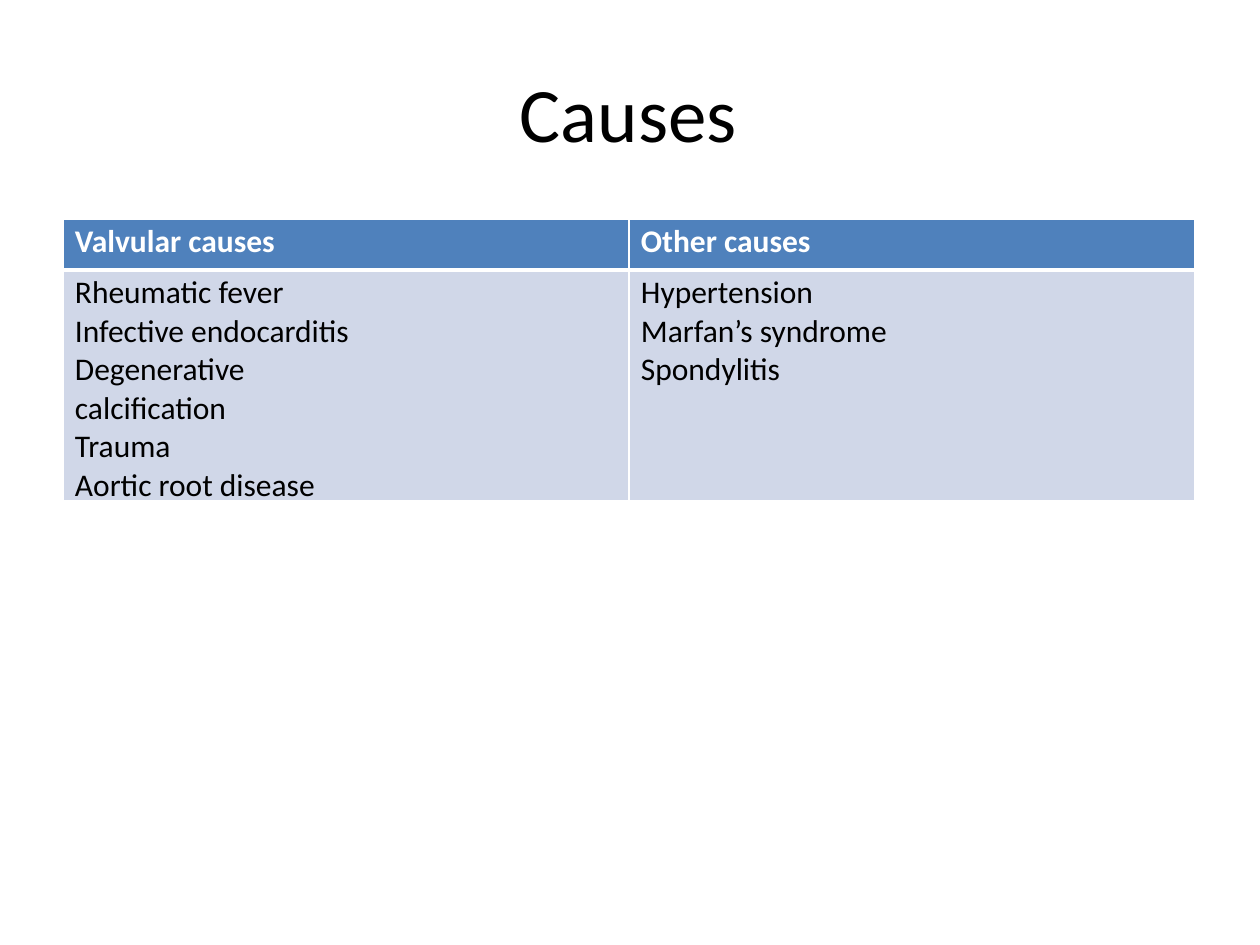
import pptx
import pptx.dml.color
import pptx.oxml
import pptx.oxml.ns
import pptx.util

PX = 914400 // 126
FONT = "Calibri"
COLORS = {"text": "000000", "header": "4F81BC", "body": "D0D7E8", "line": "FFFFFF"}


def style(paragraph, size, color, bold=False):
    paragraph.font.name = FONT
    paragraph.font.size = pptx.util.Pt(size)
    paragraph.font.bold = bold
    paragraph.font.color.rgb = pptx.dml.color.RGBColor.from_string(COLORS[color])


def set_borders(cell, widths):
    """Draw the left, right, top and bottom borders, with widths in points."""
    properties = cell._tc.get_or_add_tcPr()
    for position, (side, width) in enumerate(zip("LRTB", widths)):
        border = pptx.oxml.parse_xml(
            f'<a:ln{side} {pptx.oxml.ns.nsdecls("a")} w="{pptx.util.Pt(width)}">'
            f'<a:solidFill><a:srgbClr val="{COLORS["line"]}"/></a:solidFill></a:ln{side}>'
        )
        properties.insert(position, border)


presentation = pptx.Presentation()
presentation.slide_width = 1260 * PX
presentation.slide_height = 945 * PX
slide = presentation.slides.add_slide(presentation.slide_layouts[6])

title = slide.shapes.add_textbox(520 * PX, 66 * PX, 352 * PX, 94 * PX).text_frame
title.word_wrap = True
title.margin_left = title.margin_right = title.margin_top = title.margin_bottom = 0
title.text = "Causes"
style(title.paragraphs[0], 44, "text")

# A vertical tab is a line break inside one cause.
causes = {
    "Valvular causes": [
        "Rheumatic fever",
        "Infective endocarditis",
        "Degenerative\vcalcification",
        "Trauma",
        "Aortic root disease",
    ],
    "Other causes": ["Hypertension", "Marfan’s syndrome", "Spondylitis"],
}
table = slide.shapes.add_table(
    2, len(causes), 63 * PX, 219 * PX, 1132 * PX, 282 * PX
).table
table.rows[0].height = 51 * PX
table.rows[1].height = 231 * PX

for column, (heading, items) in enumerate(causes.items()):
    table.columns[column].width = 566 * PX
    rows = [
        ([heading], "header", "line", True, (1, 1, 1, 3)),
        (items, "body", "text", False, (1, 1, 3, 1)),
    ]
    for row, (lines, fill, color, bold, border_widths) in enumerate(rows):
        cell = table.cell(row, column)
        cell.margin_left = 12 * PX
        cell.margin_top = 4 * PX
        cell.margin_right = cell.margin_bottom = 0
        cell.fill.solid()
        cell.fill.fore_color.rgb = pptx.dml.color.RGBColor.from_string(COLORS[fill])
        set_borders(cell, border_widths)
        cell.text_frame.text = "\n".join(lines)
        for paragraph in cell.text_frame.paragraphs:
            style(paragraph, 18, color, bold)

presentation.save("out.pptx")
